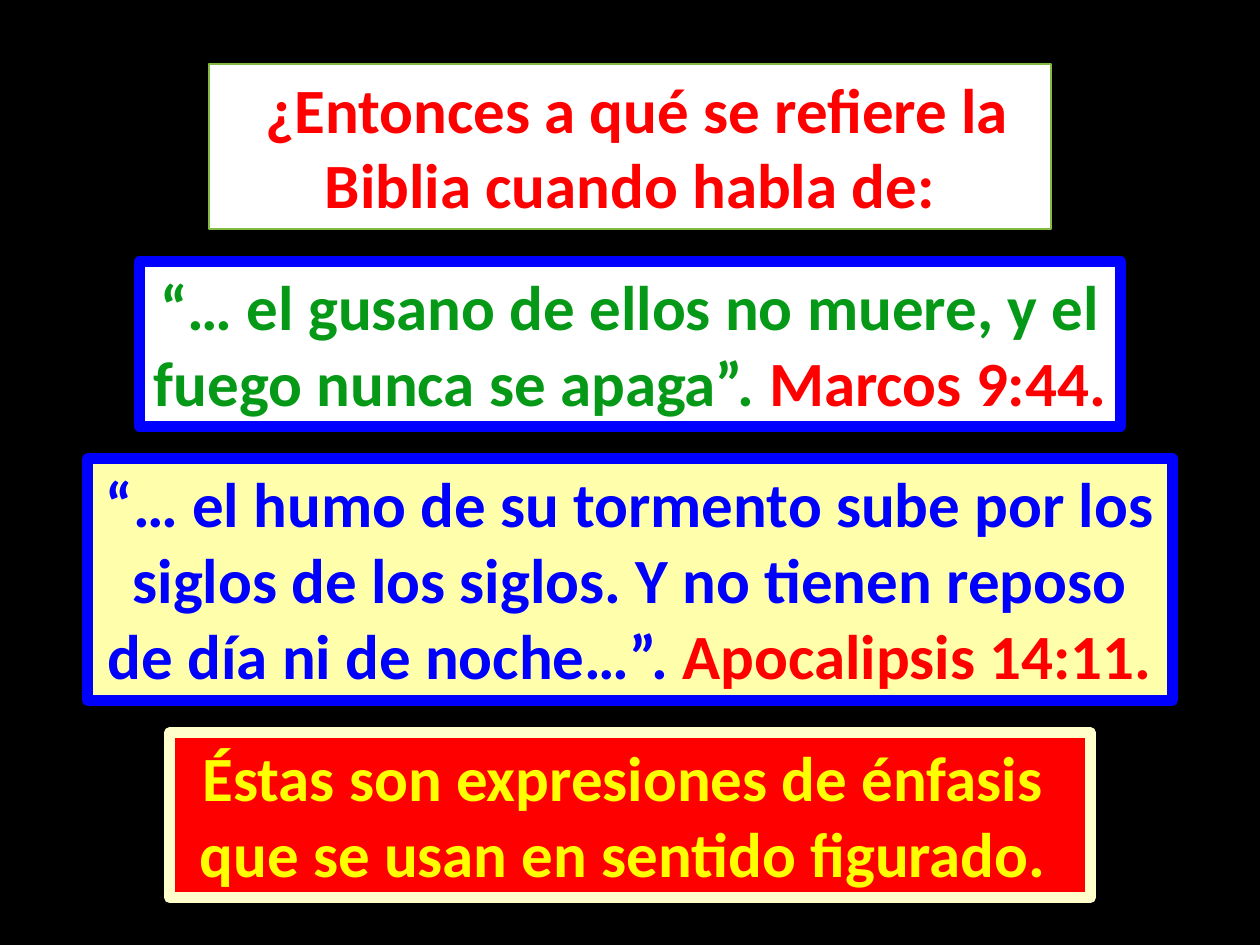
"""Build a slide of four centred, stacked text panels."""
from dataclasses import dataclass
from typing import Optional

from lxml.etree import SubElement
from pptx import Presentation
from pptx.dml.color import RGBColor
from pptx.enum.text import MSO_AUTO_SIZE, PP_ALIGN
from pptx.oxml.ns import qn
from pptx.slide import Slide
from pptx.text.text import TextFrame
from pptx.util import Inches, Pt


@dataclass(frozen=True)
class Theme:
    """Colours, type and line sizes."""
    black: str = "000000"
    white: str = "FFFFFF"
    red: str = "FF0000"
    blue: str = "0000FF"
    green: str = "059917"
    lime: str = "81BB42"
    yellow: str = "FFFF00"
    cream: str = "FFFFAB"
    ivory: str = "FFFFCC"
    font: str = "Calibri"
    size: float = 36
    edge: float = 0.75
    thin: float = 1
    thick: float = 6


@dataclass(frozen=True)
class Run:
    """A piece of text in one colour."""
    text: str
    ink: str


@dataclass(frozen=True)
class Panel:
    """A filled box, sized in percent of the slide."""
    width: float
    height: float
    fill: str
    line: str
    weight: float
    lines: tuple[tuple[Run, ...], ...]


THEME = Theme()
WIDE, HIGH = Inches(10), Inches(7.5)
TOP, GAP = 6.8, 3.4
TWO, THREE = 17.47, 25.6

PANELS = (
    Panel(66.8, TWO, THEME.white, THEME.lime, THEME.thin, (
        (Run(" ¿Entonces a qué se refiere la Biblia cuando habla de:", THEME.red),),
    )),
    Panel(77.9, TWO, THEME.white, THEME.blue, THEME.thick, (
        (Run("“… el gusano de ellos no muere, y el fuego nunca se apaga”. ", THEME.green),
         Run("Marcos 9:44. ", THEME.red)),
    )),
    Panel(86.1, THREE, THEME.cream, THEME.blue, THEME.thick, (
        (Run("“… el humo de su tormento sube por los siglos de los siglos. "
             "Y no tienen reposo de día ni de noche…”. ", THEME.blue),
         Run("Apocalipsis 14:11.", THEME.red)),
    )),
    Panel(73.1, TWO, THEME.red, THEME.ivory, THEME.thick, (
        (Run("Éstas son expresiones de énfasis ", THEME.yellow),),
        (Run("que se usan en sentido figurado. ", THEME.yellow),),
    )),
)


def write(frame: TextFrame, lines: tuple[tuple[Run, ...], ...], *,
          font: str = THEME.font, size: float = THEME.size, bold: bool = True,
          align: PP_ALIGN = PP_ALIGN.CENTER, edge: Optional[float] = THEME.edge) -> None:
    """Fill a frame with formatted paragraphs of runs."""
    for index, line in enumerate(lines):
        para = frame.add_paragraph() if index else frame.paragraphs[0]
        para.alignment = align
        for part in line:
            run = para.add_run()
            run.text = part.text
            run.font.name, run.font.size, run.font.bold = font, Pt(size), bold
            run.font.color.rgb = RGBColor.from_string(part.ink)
            if edge:
                props = run.font._element
                stroke = SubElement(props, qn("a:ln"), w=str(int(Pt(edge))))
                fill = SubElement(stroke, qn("a:solidFill"))
                SubElement(fill, qn("a:srgbClr"), val=part.ink)
                props.insert(0, stroke)


def draw(slide: Slide, panel: Panel, top: float) -> None:
    """Draw one panel centred across the slide."""
    width = int(WIDE * panel.width / 100)
    box = slide.shapes.add_textbox((WIDE - width) // 2, int(HIGH * top / 100),
                                   width, int(HIGH * panel.height / 100))
    box.fill.solid()
    box.fill.fore_color.rgb = RGBColor.from_string(panel.fill)
    box.line.color.rgb = RGBColor.from_string(panel.line)
    box.line.width = Pt(panel.weight)
    box.text_frame.word_wrap = True
    box.text_frame.auto_size = MSO_AUTO_SIZE.SHAPE_TO_FIT_TEXT
    write(box.text_frame, panel.lines)


def main() -> None:
    """Stack the panels with equal gaps and save the deck."""
    deck = Presentation()
    deck.slide_width, deck.slide_height = WIDE, HIGH
    slide = deck.slides.add_slide(deck.slide_layouts[6])
    slide.background.fill.solid()
    slide.background.fill.fore_color.rgb = RGBColor.from_string(THEME.black)
    top = TOP
    for panel in PANELS:
        draw(slide, panel, top)
        top += panel.height + GAP
    deck.save("out.pptx")


if __name__ == "__main__":
    main()
